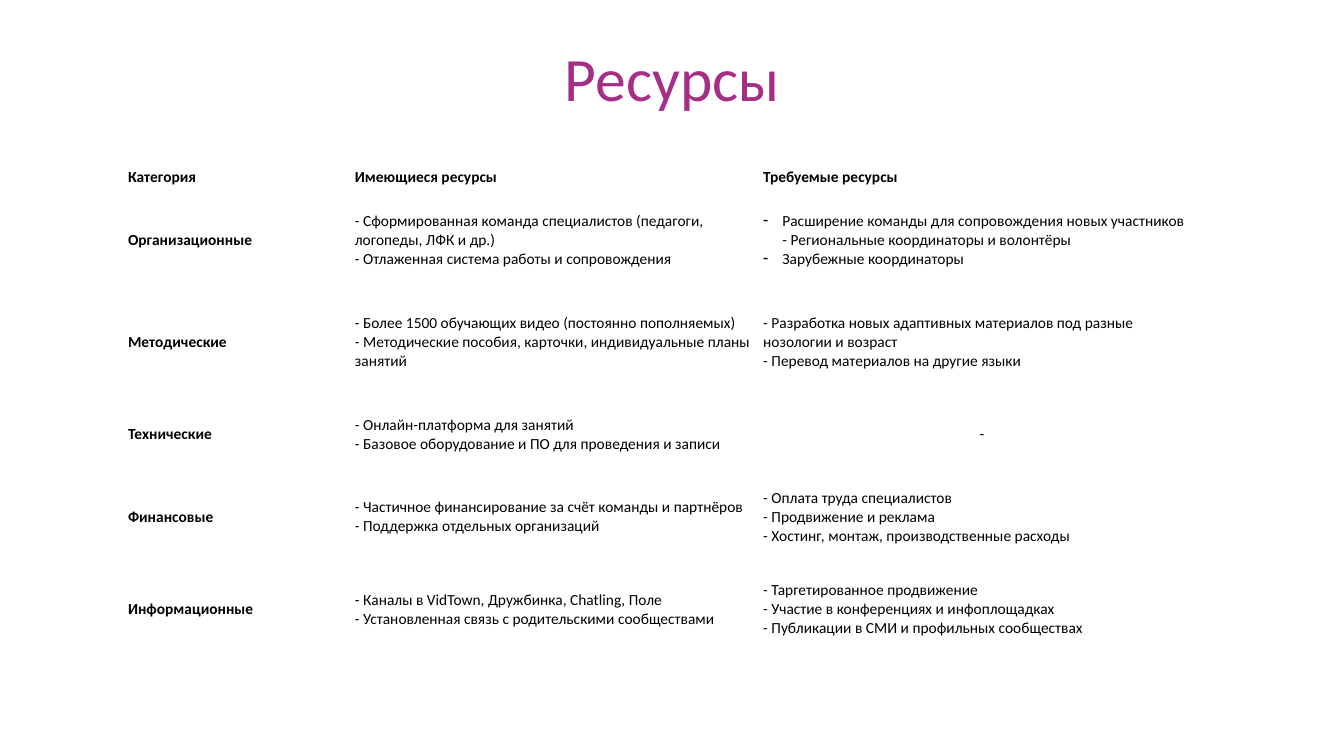
"""Slide with a table of available and required project resources."""
from pptx import Presentation
from pptx.dml.color import RGBColor
from pptx.enum import text
from pptx.oxml import ns
from pptx.util import Inches, Pt
from lxml import etree

PURPLE = RGBColor(0xA7, 0x2E, 0x87)
BLACK = RGBColor(0, 0, 0)
COLUMN_WIDTHS = [2.25, 4.05, 4.46]
ROW_HEIGHTS = [0.25, 1.01, 1.01, 0.82, 0.82, 1.01]
HANGING = 0.19
RESOURCES = [
    ["Категория", ["Имеющиеся ресурсы"], ["Требуемые ресурсы"]],
    ["Организационные",
     ["- Сформированная команда специалистов (педагоги, логопеды, ЛФК и др.)\n"
      "- Отлаженная система работы и сопровождения"],
     ["Расширение команды для сопровождения новых участников\n"
      "- Региональные координаторы и волонтёры",
      "Зарубежные координаторы"]],
    ["Методические",
     ["- Более 1500 обучающих видео (постоянно пополняемых)\n"
      "- Методические пособия, карточки, индивидуальные планы занятий"],
     ["- Разработка новых адаптивных материалов под разные нозологии и возраст\n"
      "- Перевод материалов на другие языки"]],
    ["Технические",
     ["- Онлайн-платформа для занятий\n"
      "- Базовое оборудование и ПО для проведения и записи"],
     ["-"]],
    ["Финансовые",
     ["- Частичное финансирование за счёт команды и партнёров\n"
      "- Поддержка отдельных организаций"],
     ["- Оплата труда специалистов\n"
      "- Продвижение и реклама\n"
      "- Хостинг, монтаж, производственные расходы"]],
    ["Информационные",
     ["- Каналы в VidTown, Дружбинка, Chatling, Поле\n"
      "- Установленная связь с родительскими сообществами"],
     ["- Таргетированное продвижение\n"
      "- Участие в конференциях и инфоплощадках\n"
      "- Публикации в СМИ и профильных сообществах"]],
]


def style(paragraph, size, color, bold=False):
    paragraph.font.name = "Calibri"
    paragraph.font.size = Pt(size)
    paragraph.font.bold = bold
    paragraph.font.color.rgb = color


deck = Presentation()
deck.slide_width, deck.slide_height = Inches(13.33), Inches(7.5)
slide = deck.slides.add_slide(deck.slide_layouts[6])

heading = slide.shapes.add_textbox(Inches(0.92), Inches(0.4), Inches(11.5), Inches(0.81)).text_frame
heading.word_wrap = True
heading.vertical_anchor = text.MSO_ANCHOR.MIDDLE
title = heading.paragraphs[0]
title.text = "Ресурсы"
title.alignment = text.PP_ALIGN.CENTER
title.line_spacing = 0.9
style(title, 44, PURPLE)

table = slide.shapes.add_table(
    len(ROW_HEIGHTS), len(COLUMN_WIDTHS), Inches(1.21), Inches(1.63),
    Inches(sum(COLUMN_WIDTHS)), Inches(sum(ROW_HEIGHTS))).table
table.first_row = table.horz_banding = False
for column, width in zip(table.columns, COLUMN_WIDTHS):
    column.width = Inches(width)

for row_index, (category, available, required) in enumerate(RESOURCES):
    table.rows[row_index].height = Inches(ROW_HEIGHTS[row_index])
    for column_index, entries in enumerate([[category], available, required]):
        cell = table.cell(row_index, column_index)
        cell.fill.background()
        cell.vertical_anchor = text.MSO_ANCHOR.MIDDLE
        cell.margin_left = cell.margin_right = Inches(0.06)
        cell.margin_top = cell.margin_bottom = Inches(0.03)
        for entry_index, entry in enumerate(entries):
            paragraph = cell.text_frame.add_paragraph() if entry_index else cell.text_frame.paragraphs[0]
            paragraph.text = entry
            if entry == "-":
                paragraph.alignment = text.PP_ALIGN.CENTER
            style(paragraph, 11, BLACK, bold=row_index == 0 or column_index == 0)
            if len(entries) > 1:
                properties = paragraph._p.get_or_add_pPr()
                properties.set("marL", str(Inches(HANGING)))
                properties.set("indent", str(-Inches(HANGING)))
                bullet = etree.Element(ns.qn("a:buChar"), char="-")
                properties.find(ns.qn("a:defRPr")).addprevious(bullet)

deck.save("out.pptx")
